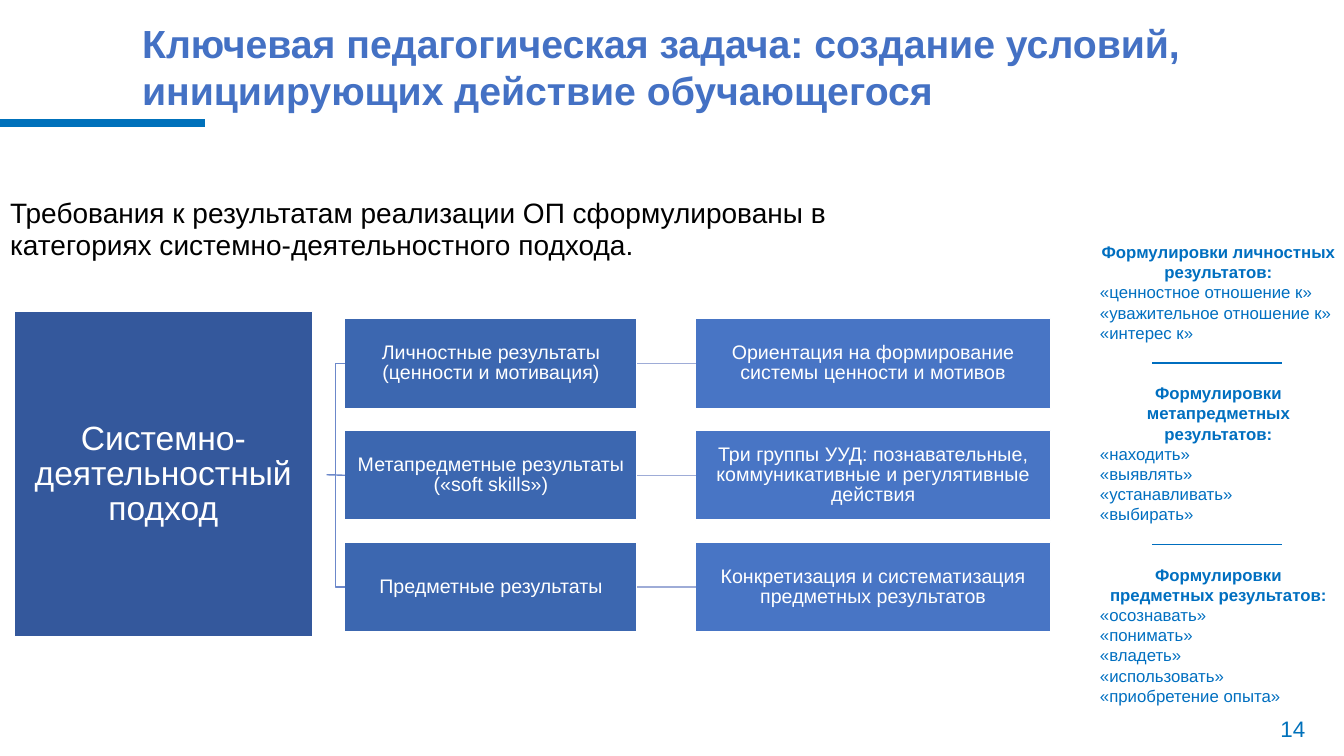
from pptx import Presentation
from pptx.dml.color import RGBColor
from pptx.enum.shapes import MSO_CONNECTOR, MSO_SHAPE
from pptx.enum.text import MSO_ANCHOR, MSO_AUTO_SIZE, PP_ALIGN
from pptx.oxml.ns import qn
from pptx.util import Pt

PX = 9144  # EMU per px, 100 px to the inch
FONT = "Arial"

WHITE = RGBColor(0xFF, 0xFF, 0xFF)
BLACK = RGBColor(0x00, 0x00, 0x00)
TITLE = RGBColor(0x44, 0x71, 0xC4)
ACCENT = RGBColor(0x00, 0x71, 0xBB)
ROOT = RGBColor(0x34, 0x58, 0x9C)
RESULT = RGBColor(0x3C, 0x67, 0xB0)
DETAIL = RGBColor(0x48, 0x75, 0xC5)
TREE = RGBColor(0x6C, 0x88, 0xCA)
LINK = RGBColor(0x9E, 0xAC, 0xD7)
NOTE = RGBColor(0x00, 0x6F, 0xC0)
RULE = RGBColor(0x00, 0x6E, 0xBF)

ROWS = [
    ("Личностные результаты (ценности и мотивация)",
     "Ориентация на формирование системы ценности и мотивов"),
    ("Метапредметные результаты («soft skills»)",
     "Три группы УУД: познавательные, коммуникативные и регулятивные действия"),
    ("Предметные результаты",
     "Конкретизация и систематизация предметных результатов"),
]
NOTES = [
    (["Формулировки личностных", "результатов:"],
     ["«ценностное отношение к»", "«уважительное отношение к»", "«интерес к»"]),
    (["Формулировки", "метапредметных", "результатов:"],
     ["«находить»", "«выявлять»", "«устанавливать»", "«выбирать»"]),
    (["Формулировки", "предметных результатов:"],
     ["«осознавать»", "«понимать»", "«владеть»", "«использовать»",
      "«приобретение опыта»"]),
]


def px(*nums):
    return [num * PX for num in nums]


def set_frame(frame, side=0, anchor=MSO_ANCHOR.TOP):
    frame.word_wrap = True
    frame.auto_size = MSO_AUTO_SIZE.NONE
    frame.vertical_anchor = anchor
    frame.margin_left = frame.margin_right = side * PX
    frame.margin_top = frame.margin_bottom = 0


def write(para, lines, size, color, pitch, bold=False, align=PP_ALIGN.LEFT):
    para.alignment = align
    para.line_spacing = Pt(pitch)
    para.space_before = Pt(0)
    for i, line in enumerate(lines):
        if i:
            para.add_line_break()
        run = para.add_run()
        run.text = line
        font = run.font
        font.name, font.size, font.bold = FONT, Pt(size), bold
        font.color.rgb = color


def add_text(slide, place):
    frame = slide.shapes.add_textbox(*px(*place)).text_frame
    set_frame(frame)
    return frame


def add_box(slide, place, fill, text, size, pitch):
    box = slide.shapes.add_shape(MSO_SHAPE.RECTANGLE, *px(*place))
    box.shadow.inherit = False
    box.fill.solid()
    box.fill.fore_color.rgb = fill
    box.line.color.rgb = WHITE
    box.line.width = Pt(1)
    set_frame(box.text_frame, 10, MSO_ANCHOR.MIDDLE)
    write(box.text_frame.paragraphs[0], [text], size, WHITE, pitch,
          align=PP_ALIGN.CENTER)
    return box


def add_line(slide, ends, color, width=1, kind=MSO_CONNECTOR.STRAIGHT):
    line = slide.shapes.add_connector(kind, *px(*ends))
    line.line.color.rgb = color
    line.line.width = Pt(width)
    props = line._element.spPr
    props.append(props.makeelement(qn("a:effectLst"), {}))
    return line


def add_title(slide):
    title = slide.shapes.title
    title.left, title.top, title.width, title.height = px(127, 19, 1079, 96)
    set_frame(title.text_frame, 14)
    write(title.text_frame.paragraphs[0],
          ["Ключевая педагогическая задача: создание условий, "
           "инициирующих действие обучающегося"], 28, TITLE, 33.6, True)


def add_tree(slide):
    add_box(slide, (14, 309, 296, 323), ROOT,
            "Системно- деятельностный подход", 24, 25)
    for i, (result, detail) in enumerate(ROWS):
        top = 316 + 111 * i
        left = add_box(slide, (342, top, 290, 89), RESULT, result, 14, 14.4)
        right = add_box(slide, (690, top, 352, 89), DETAIL, detail, 14, 14.4)
        mid = top + 44
        # Branch from the root, straight for the middle row
        kind = MSO_CONNECTOR.STRAIGHT if i == 1 else MSO_CONNECTOR.ELBOW
        branch = add_line(slide, (324, 471, 342, mid), TREE, 1, kind)
        branch.end_connect(left, 1)
        link = add_line(slide, (632, mid, 690, mid), LINK)
        link.begin_connect(left, 3)
        link.end_connect(right, 1)


def add_notes(slide):
    top, step = 240, 20
    for i, (head, items) in enumerate(NOTES):
        if i:
            add_line(slide, (1143, top - step, 1272, top - step), RULE, 1.07)
        tall = step * (len(head) + len(items))
        frame = add_text(slide, (1091, top, 235, tall))
        write(frame.paragraphs[0], head, 12, NOTE, 14.4, True, PP_ALIGN.CENTER)
        for item in items:
            write(frame.add_paragraph(), [item], 12, NOTE, 14.4)
        top += tall + 2 * step


def main():
    deck = Presentation()
    deck.slide_width, deck.slide_height = px(1333, 750)
    slide = deck.slides.add_slide(deck.slide_layouts[5])

    # Heading and accent bar
    add_title(slide)
    add_line(slide, (0, 122, 203, 122), ACCENT, 6)

    # Lead sentence
    lead = add_text(slide, (10, 196, 956, 66))
    write(lead.paragraphs[0],
          ["Требования к результатам реализации ОП сформулированы "
           "в категориях системно-деятельностного подхода."], 20, BLACK, 22.8)

    # Diagram and side column
    add_tree(slide)
    add_notes(slide)

    # Page number
    page = add_text(slide, (1270, 710, 34, 28))
    write(page.paragraphs[0], ["14"], 16, ACCENT, 18.7)

    deck.save("out.pptx")


if __name__ == "__main__":
    main()
